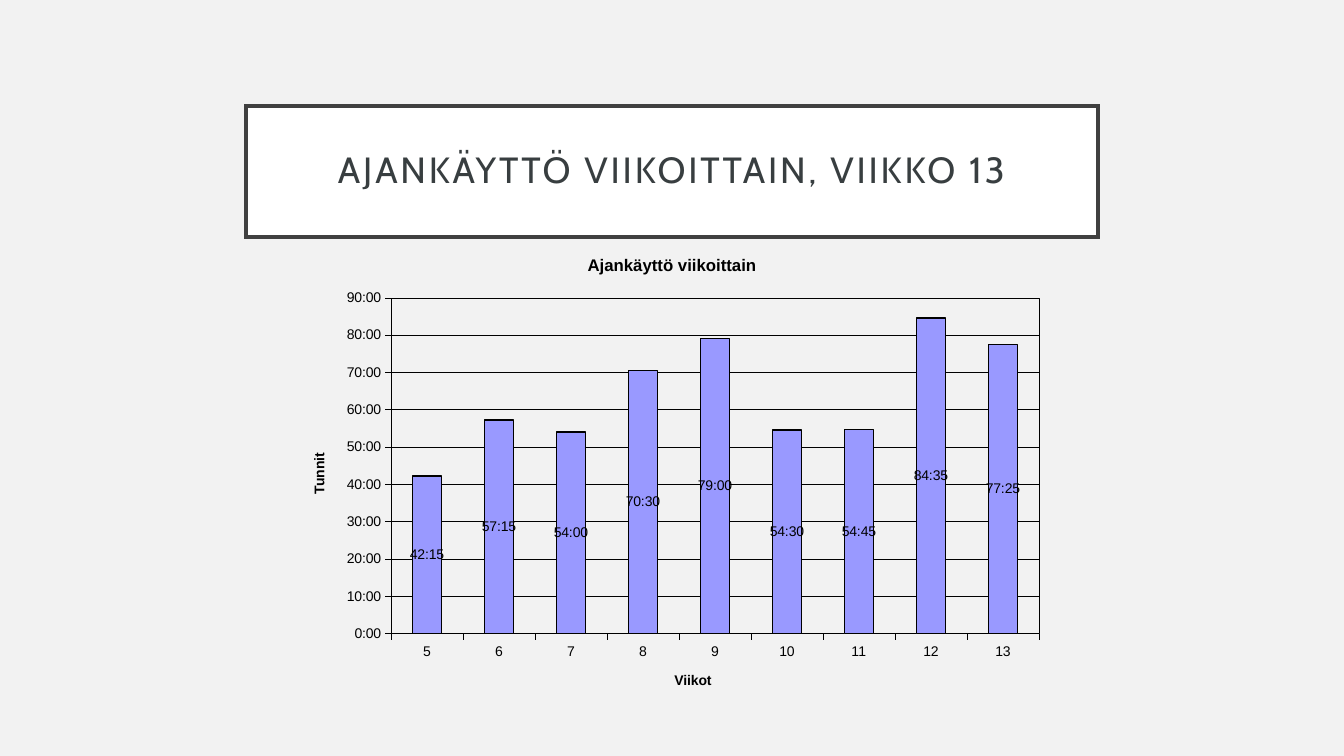
from math import ceil

from pptx import Presentation
from pptx.chart.data import CategoryChartData
from pptx.dml.color import RGBColor
from pptx.enum.chart import XL_CHART_TYPE, XL_LABEL_POSITION, XL_TICK_MARK
from pptx.enum.text import MSO_ANCHOR, PP_ALIGN
from pptx.oxml import parse_xml
from pptx.oxml.ns import nsdecls, qn
from pptx.util import Pt

BLACK = RGBColor(0, 0, 0)
WHITE = RGBColor(255, 255, 255)
PAPER = RGBColor(0xF2, 0xF2, 0xF2)
FRAME = RGBColor(0x40, 0x40, 0x40)
INK = RGBColor(0x38, 0x3E, 0x40)
BAR = RGBColor(0x99, 0x99, 0xFF)

CLOCK = "[h]:mm"
WEEKS = range(5, 14)
TIMES = ["42:15", "57:15", "54:00", "70:30", "79:00",
         "54:30", "54:45", "84:35", "77:25"]


def apply(item, **values):
    for name, value in values.items():
        setattr(item, name, value)


def style(font, color, **values):
    apply(font, **values)
    font.color.rgb = color


def stroke(line, color, width):
    line.color.rgb = color
    line.width = Pt(width)


def days(time):
    hours, mins = map(int, time.split(":"))
    return (hours + mins / 60) / 24


def trim(value):
    return ceil(value * 10000) / 10000


def layout(**values):
    parts = "".join(f'<c:{k} val="{v}"/>' for k, v in values.items())
    return parse_xml(f'<c:layout {nsdecls("c")}><c:manualLayout>{parts}'
                     '</c:manualLayout></c:layout>')


def arrange(node, after, **values):
    old = node.find(qn("c:layout"))
    if old is not None:
        node.remove(old)
    new = layout(**values)
    if after is None:
        node.insert(0, new)
    else:
        after.addnext(new)


def caption(owner, text, size):
    frame = owner.text_frame
    frame.text = text
    font = frame.paragraphs[0].runs[0].font
    style(font, BLACK, name="Arial", size=Pt(size), bold=True)


def add_title(slide, text, left, top, width, height):
    title = slide.shapes.title
    apply(title, left=Pt(left), top=Pt(top), width=Pt(width), height=Pt(height))
    title.fill.solid()
    title.fill.fore_color.rgb = WHITE
    stroke(title.line, FRAME, 2.5)
    edge = title._element.spPr.find(qn("a:ln"))
    edge.append(parse_xml(f'<a:miter {nsdecls("a")} lim="800000"/>'))
    frame = title.text_frame
    pad = Pt(14.4)
    apply(frame, text=text, word_wrap=True, vertical_anchor=MSO_ANCHOR.MIDDLE,
          margin_left=pad, margin_right=pad, margin_top=pad, margin_bottom=pad)
    para = frame.paragraphs[0]
    apply(para, alignment=PP_ALIGN.CENTER, line_spacing=0.9)
    font = para.runs[0].font
    style(font, INK, name="Cabin", size=Pt(26))
    para.runs[0]._r.get_or_add_rPr().set("spc", "200")


def add_bars(slide, left, top, width, height):
    data = CategoryChartData(number_format=CLOCK)
    data.categories = [str(week) for week in WEEKS]
    data.add_series("Series 1", [trim(days(time)) for time in TIMES])
    chart = slide.shapes.add_chart(
        XL_CHART_TYPE.COLUMN_STACKED, Pt(left), Pt(top), Pt(width),
        Pt(height), data).chart
    chart.has_legend = False
    style(chart.font, BLACK, name="Arial", size=Pt(10))
    chart.has_title = True
    caption(chart.chart_title, "Ajankäyttö viikoittain", 12)

    plot = chart.plots[0]
    apply(plot, gap_width=150, overlap=100, vary_by_categories=False,
          has_data_labels=True)
    labels = plot.data_labels
    apply(labels, show_value=True, number_format=CLOCK,
          number_format_is_linked=False, position=XL_LABEL_POSITION.CENTER)
    style(labels.font, BLACK, name="Arial", size=Pt(10))
    bars = plot.series[0].format
    bars.fill.solid()
    bars.fill.fore_color.rgb = BAR
    stroke(bars.line, BLACK, 1)

    across, up = chart.category_axis, chart.value_axis
    for axis, text in ((across, "Viikot"), (up, "Tunnit")):
        apply(axis, has_title=True, major_tick_mark=XL_TICK_MARK.OUTSIDE,
              minor_tick_mark=XL_TICK_MARK.NONE)
        caption(axis.axis_title, text, 10)
        style(axis.tick_labels.font, BLACK, name="Arial", size=Pt(10))
        stroke(axis.format.line, BLACK, 0.25)
    apply(up, minimum_scale=0, maximum_scale=days("90:00"),
          major_unit=days("10:00"), has_major_gridlines=True)
    apply(up.tick_labels, number_format=CLOCK, number_format_is_linked=False)
    stroke(up.major_gridlines.format.line, BLACK, 0.25)

    spots = ((0.386, 0.032), (0.5, 0.916), (0.024, 0.453))
    for node, (x, y) in zip(chart.element.iter(qn("c:title")), spots):
        arrange(node, node.find(qn("c:tx")), xMode="edge", yMode="edge", x=x, y=y)
    area = next(chart.element.iter(qn("c:plotArea")))
    arrange(area, None, layoutTarget="inner", xMode="edge", yMode="edge",
            x=0.133, y=0.129, w=0.847, h=0.712)
    area.append(parse_xml(
        f'<c:spPr {nsdecls("c", "a")}><a:noFill/><a:ln w="3175"><a:solidFill>'
        f'<a:srgbClr val="{BLACK}"/></a:solidFill></a:ln></c:spPr>'))


def main():
    deck = Presentation()
    apply(deck, slide_width=Pt(960), slide_height=Pt(540))
    slide = deck.slides.add_slide(deck.slide_layouts[5])
    back = slide.background.fill
    back.solid()
    back.fore_color.rgb = PAPER
    add_title(slide, "AJANKÄYTTÖ VIIKOITTAIN, VIIKKO 13", 175.7, 75.6, 608.6, 93.6)
    add_bars(slide, 206.6, 169.2, 546.5, 337)
    deck.save("out.pptx")


if __name__ == "__main__":
    main()
